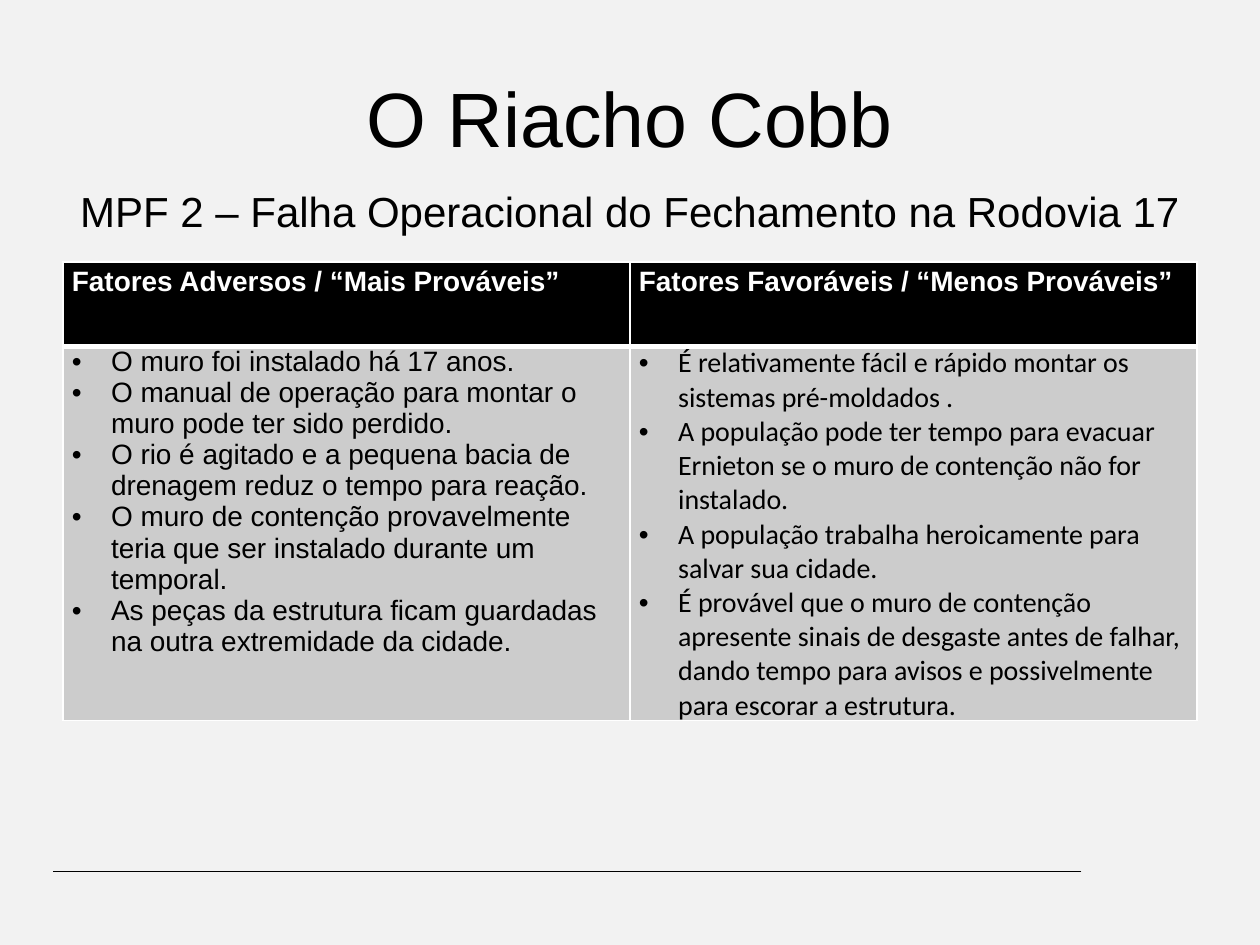
import pptx
import pptx.dml.color
import pptx.enum.shapes
import pptx.enum.text
import pptx.oxml.ns
import pptx.util
from lxml import etree

Cm, Pt = pptx.util.Cm, pptx.util.Pt
qn = pptx.oxml.ns.qn

# Content
TITLE = "O Riacho Cobb"
SUBTITLE = "MPF 2 – Falha Operacional do Fechamento na Rodovia 17"
FACTORS = [
    {
        "heading": "Fatores Adversos / “Mais Prováveis”",
        "font": "Arial",
        "points": [
            "O muro foi instalado há 17 anos.",
            "O manual de operação para montar o muro pode ter sido perdido.",
            "O rio é agitado e a pequena bacia de drenagem reduz o tempo para reação.",
            "O muro de contenção provavelmente teria que ser instalado durante um temporal.",
            "As peças da estrutura ficam guardadas na outra extremidade da cidade.",
        ],
    },
    {
        "heading": "Fatores Favoráveis / “Menos Prováveis”",
        "font": "Calibri",
        "points": [
            "É relativamente fácil e rápido montar os sistemas pré-moldados .",
            "A população pode ter tempo para evacuar Ernieton se o muro de contenção não for instalado.",
            "A população trabalha heroicamente para salvar sua cidade.",
            "É provável que o muro de contenção apresente sinais de desgaste antes de falhar, "
            "dando tempo para avisos e possivelmente para escorar a estrutura.",
        ],
    },
]
COLORS = {"background": "F2F2F2", "text": "000000", "header": "000000",
          "header_text": "FFFFFF", "body": "CCCCCC", "border": "FFFFFF"}
ROW_HEIGHTS = [Cm(1.7), Cm(7.54)]
COLUMN_WIDTH = Cm(11.43)
BULLET_INDENT = Cm(0.79)


def rgb(name):
    return pptx.dml.color.RGBColor.from_string(COLORS[name])


def style(paragraph, size, color="text", font="Arial", bold=False):
    for run in paragraph.runs:
        run.font.size = Pt(size)
        run.font.name = font
        run.font.bold = bold
        run.font.color.rgb = rgb(color)


def add_heading(slide, text, size, left, top, width, height):
    box = slide.shapes.add_textbox(left, top, width, height)
    frame = box.text_frame
    frame.word_wrap = True
    frame.vertical_anchor = pptx.enum.text.MSO_ANCHOR.MIDDLE
    frame.text = text
    frame.paragraphs[0].alignment = pptx.enum.text.PP_ALIGN.CENTER
    style(frame.paragraphs[0], size)


def add_bullet(paragraph):
    properties = paragraph._p.get_or_add_pPr()
    properties.set("marL", str(BULLET_INDENT))
    properties.set("indent", str(-BULLET_INDENT))
    etree.SubElement(properties, qn("a:buFont")).set("typeface", "Arial")
    etree.SubElement(properties, qn("a:buChar")).set("char", "•")


def format_cell(cell, fill, bottom_width):
    cell.margin_left = cell.margin_right = Cm(0.18)
    cell.margin_top = cell.margin_bottom = 0
    properties = cell._tc.get_or_add_tcPr()
    for side, width in (("L", 1), ("R", 1), ("T", 1), ("B", bottom_width)):
        border = etree.SubElement(properties, qn(f"a:ln{side}"), w=str(Pt(width)))
        solid = etree.SubElement(border, qn("a:solidFill"))
        etree.SubElement(solid, qn("a:srgbClr")).set("val", COLORS["border"])
    cell.fill.solid()
    cell.fill.fore_color.rgb = rgb(fill)


presentation = pptx.Presentation()
presentation.slide_width, presentation.slide_height = Cm(25.4), Cm(19.05)
slide = presentation.slides.add_slide(presentation.slide_layouts[6])
slide.background.fill.solid()
slide.background.fill.fore_color.rgb = rgb("background")

# Footer rule
footer_rule = slide.shapes.add_connector(
    pptx.enum.shapes.MSO_CONNECTOR.STRAIGHT, Cm(21.8), Cm(17.57), Cm(1.06), Cm(17.57))
footer_rule.line.color.rgb = rgb("text")
footer_rule.line.width = Pt(0.75)
etree.SubElement(footer_rule._element.spPr, qn("a:effectLst"))

# Title and subtitle
add_heading(slide, TITLE, 44, Cm(1.27), Cm(0.76), Cm(22.86), Cm(3.18))
add_heading(slide, SUBTITLE, 24, Cm(0.85), Cm(3.6), Cm(23.7), Cm(1.28))

# Table of factors
factors_table = slide.shapes.add_table(
    2, len(FACTORS), Cm(1.27), Cm(5.28),
    COLUMN_WIDTH * len(FACTORS), sum(ROW_HEIGHTS)).table
for row, height in zip(factors_table.rows, ROW_HEIGHTS):
    row.height = height

for column, factor in enumerate(FACTORS):
    factors_table.columns[column].width = COLUMN_WIDTH

    header = factors_table.cell(0, column)
    format_cell(header, "header", 3)
    header.text_frame.text = factor["heading"]
    header.text_frame.paragraphs[0].line_spacing = 1.15
    style(header.text_frame.paragraphs[0], 16, "header_text", bold=True)

    body = factors_table.cell(1, column)
    format_cell(body, "body", 1)
    body.text_frame.text = "\n".join(factor["points"])
    for point in body.text_frame.paragraphs:
        add_bullet(point)
        style(point, 16, font=factor["font"])

presentation.save("out.pptx")
